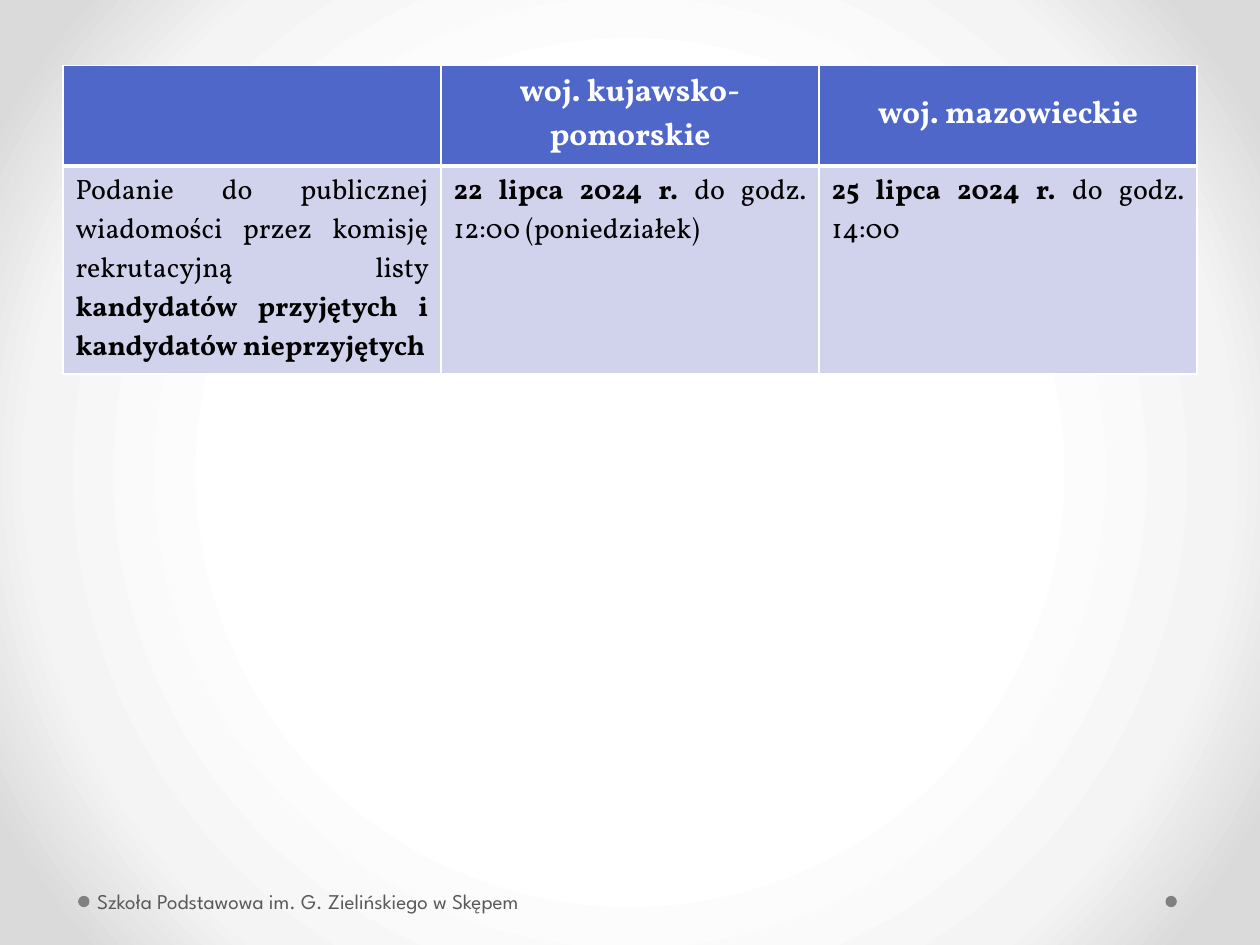
from pptx import Presentation
from pptx import util as u
from pptx.dml import color
from pptx.enum import shapes, text
from pptx.oxml import ns, parse_xml

THEME = {
    "header": "4E67C8", "body": "D0D3EB", "white": "FFFFFF", "black": "000000",
    "dot": "808080", "footer": "595959",
    "backdrop": [(50, "FFFFFF"), (76, "F4F4F4"), (92, "DADADA")],
    "header_size": 18, "body_size": 16, "footer_size": 12,
    "table_font": "Vollkorn", "footer_font": "League Spartan",
}


def add_run(paragraph, words, size, font, colour, bold=False):
    run = paragraph.add_run()
    run.text = words
    for name, value in {"size": u.Pt(size), "name": font, "bold": bold}.items():
        setattr(run.font, name, value)
    run.font.color.rgb = color.RGBColor.from_string(colour)


def set_border(cell, side, width):
    cell._tc.get_or_add_tcPr().append(parse_xml(
        f'<a:{side} {ns.nsdecls("a")} w="{u.Pt(width)}"><a:solidFill>'
        f'<a:srgbClr val="{THEME["white"]}"/></a:solidFill></a:{side}>'))


presentation = Presentation()
presentation.slide_width, presentation.slide_height = u.Pt(720), u.Pt(540)
slide = presentation.slides.add_slide(presentation.slide_layouts[6])

slide.background.fill.gradient()
gradient = slide.element.find(".//" + ns.qn("a:gradFill"))
stops = "".join(f'<a:gs pos="{place * 1000}"><a:srgbClr val="{colour}"/></a:gs>'
                for place, colour in THEME["backdrop"])
gradient.getparent().replace(gradient, parse_xml(
    f'<a:gradFill {ns.nsdecls("a")} rotWithShape="1"><a:gsLst>{stops}</a:gsLst>'
    '<a:path path="circle"><a:fillToRect l="50000" t="50000" r="50000" b="50000"/>'
    '</a:path></a:gradFill>'))

for left in (666, 44.64):
    dot = slide.shapes.add_shape(shapes.MSO_SHAPE.OVAL, u.Pt(left), u.Pt(511.9), u.Pt(6.5), u.Pt(6.5))
    dot.shadow.inherit = False
    dot.fill.solid()
    dot.fill.fore_color.rgb = color.RGBColor.from_string(THEME["dot"])
    dot.line.fill.background()

rows = [
    [[], [("woj. kujawsko-pomorskie", True)], [("woj. mazowieckie", True)]],
    [
        [("Podanie do publicznej wiadomości przez komisję rekrutacyjną listy ", False),
         ("kandydatów przyjętych i kandydatów nieprzyjętych", True)],
        [("22 lipca 2024 r.", True), (" do godz. 12:00 (poniedziałek)", False)],
        [("25 lipca 2024 r.", True), (" do godz. 14:00", False)],
    ],
]
row_styles = [
    {"fill": THEME["header"], "colour": THEME["white"], "size": THEME["header_size"],
     "align": text.PP_ALIGN.CENTER, "anchor": text.MSO_ANCHOR.MIDDLE, "bottom": 3},
    {"fill": THEME["body"], "colour": THEME["black"], "size": THEME["body_size"],
     "align": text.PP_ALIGN.JUSTIFY, "anchor": text.MSO_ANCHOR.TOP, "bottom": 1},
]
frame = slide.shapes.add_table(2, 3, u.Pt(36), u.Pt(37.5), u.Pt(648), u.Pt(72))
frame.height = u.Pt(153.5)
for row, (contents, style) in enumerate(zip(rows, row_styles)):
    for column, runs in enumerate(contents):
        cell = frame.table.cell(row, column)
        cell.vertical_anchor = style["anchor"]
        for side, width in {"lnL": 1, "lnR": 1, "lnT": 1 if row == 0 else 3, "lnB": style["bottom"]}.items():
            set_border(cell, side, width)
        cell.fill.solid()
        cell.fill.fore_color.rgb = color.RGBColor.from_string(style["fill"])
        paragraph = cell.text_frame.paragraphs[0]
        paragraph.alignment = style["align"]
        for words, bold in runs:
            add_run(paragraph, words, style["size"], THEME["table_font"], style["colour"], bold)

footer = slide.shapes.add_textbox(u.Pt(51.84), u.Pt(500.4), u.Pt(325.5), u.Pt(28.8))
footer_format = {
    "word_wrap": True, "vertical_anchor": text.MSO_ANCHOR.MIDDLE,
    "margin_left": u.Pt(3.6), "margin_top": u.Pt(3.6),
    "margin_right": u.Pt(7.2), "margin_bottom": u.Pt(3.6),
}
for name, value in footer_format.items():
    setattr(footer.text_frame, name, value)
add_run(footer.text_frame.paragraphs[0], "Szkoła Podstawowa im. G. Zielińskiego w Skępem",
        THEME["footer_size"], THEME["footer_font"], THEME["footer"])

presentation.save("out.pptx")
